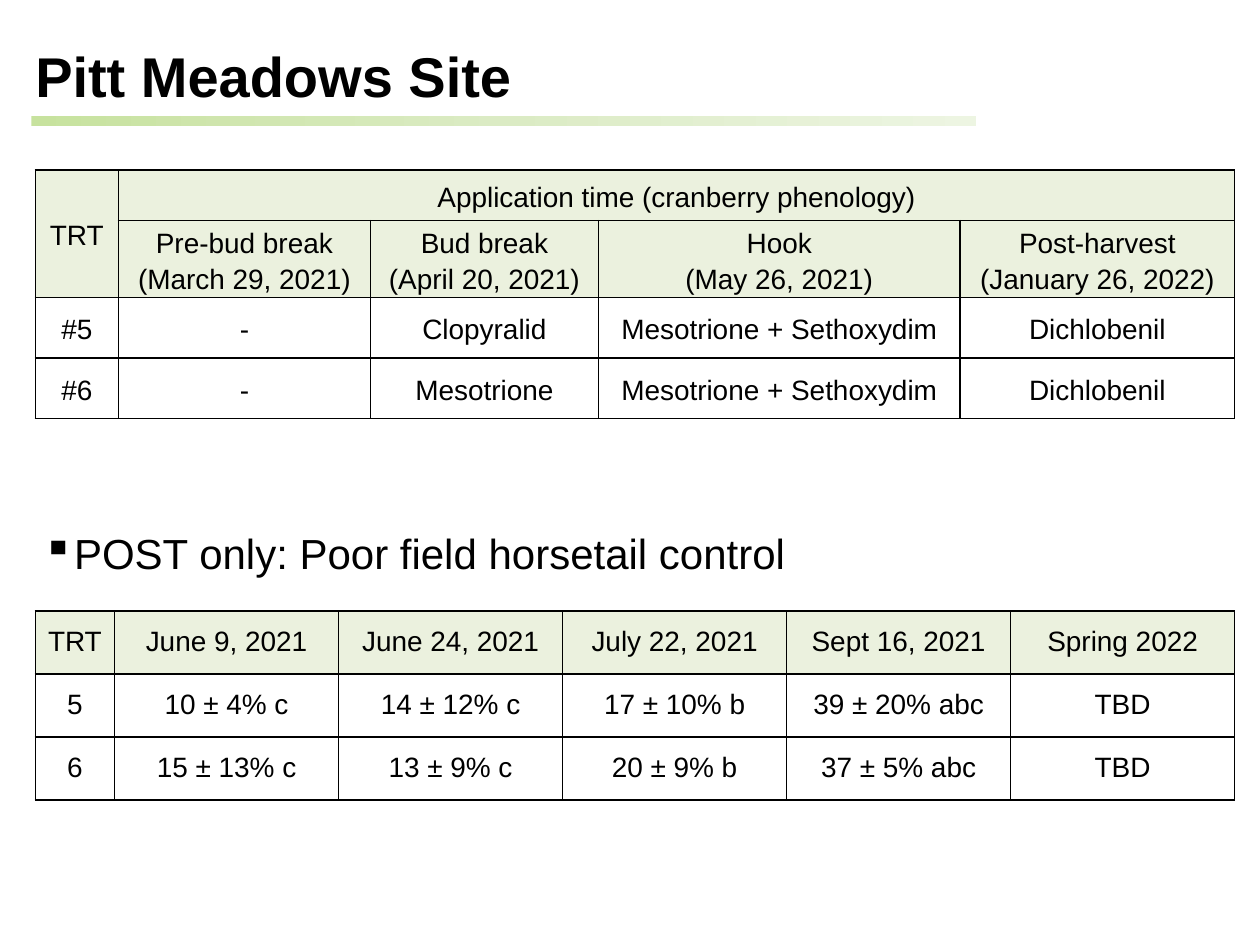
from copy import deepcopy
from dataclasses import dataclass

from lxml import etree
from pptx import Presentation
from pptx.dml.color import RGBColor
from pptx.enum.shapes import MSO_SHAPE
from pptx.enum.text import MSO_ANCHOR, MSO_AUTO_SIZE, PP_ALIGN
from pptx.oxml.ns import qn
from pptx.util import Inches, Pt

RECTANGLE = MSO_SHAPE.RECTANGLE
TOP, MIDDLE = MSO_ANCHOR.TOP, MSO_ANCHOR.MIDDLE
LEFT, CENTER = PP_ALIGN.LEFT, PP_ALIGN.CENTER
FIT_SHAPE = MSO_AUTO_SIZE.SHAPE_TO_FIT_TEXT
TITLE_ONLY = 5
FONT = "Arial"
UNIT = Inches(0.1)
COLORS = {
    "text": "000000",
    "border": "000000",
    "header": "EBF1DE",
    "bar_start": "C7E29E",
    "bar_middle": "DBEBC4",
    "bar_end": "EDF5E2",
}

SCHEDULE = [
    ["TRT", "Application time (cranberry phenology)", "", "", ""],
    ["", "Pre-bud break\n(March 29, 2021)", "Bud break\n(April 20, 2021)",
     "Hook\n(May 26, 2021)", "Post-harvest\n(January 26, 2022)"],
    ["#5", "-", "Clopyralid", "Mesotrione + Sethoxydim", "Dichlobenil"],
    ["#6", "-", "Mesotrione", "Mesotrione + Sethoxydim", "Dichlobenil"],
]
CONTROL = [
    ["TRT", "June 9, 2021", "June 24, 2021", "July 22, 2021", "Sept 16, 2021", "Spring 2022"],
    ["5", "10 ± 4% c", "14 ± 12% c", "17 ± 10% b", "39 ± 20% abc", "TBD"],
    ["6", "15 ± 13% c", "13 ± 9% c", "20 ± 9% b", "37 ± 5% abc", "TBD"],
]


@dataclass
class Box:
    column: float
    row: float
    columns: float
    rows: float

    def frame(self):
        return [round(UNIT * n) for n in (self.column, self.row, self.columns, self.rows)]


def color(name):
    return RGBColor.from_string(COLORS[name])


def style_paragraph(para, size, align, spacing=1.0, bold=False):
    para.alignment = align
    para.line_spacing = spacing
    para.font.name = FONT
    para.font.size = Pt(size)
    para.font.bold = bold
    para.font.color.rgb = color("text")


def place_title(page, box, text):
    title = page.shapes.title
    title.left, title.top, title.width, title.height = box.frame()
    frame = title.text_frame
    frame.text = text
    frame.auto_size = FIT_SHAPE
    frame.vertical_anchor = TOP
    style_paragraph(frame.paragraphs[0], 32, LEFT, bold=True)


def add_bar(page, box):
    bar = page.shapes.add_shape(RECTANGLE, *box.frame())
    bar.shadow.inherit = False
    bar.line.fill.background()
    bar.fill.gradient()
    bar.fill.gradient_angle = 0
    stop_list = next(bar._element.iter(qn("a:gsLst")))
    stop_list.insert(1, deepcopy(stop_list[0]))
    names = ("bar_start", "bar_middle", "bar_end")
    for index, (stop, name) in enumerate(zip(bar.fill.gradient_stops, names)):
        stop.position = index / 2
        stop.color.rgb = color(name)


def add_bullet(page, box, text):
    frame = page.shapes.add_textbox(*box.frame()).text_frame
    frame.word_wrap = True
    frame.auto_size = FIT_SHAPE
    para = frame.paragraphs[0]
    para.text = text
    style_paragraph(para, 24, LEFT, spacing=1.2)
    para.space_before = Pt(12)
    properties = para._p.get_or_add_pPr()
    properties.set("marL", str(Inches(0.31)))
    properties.set("indent", str(Inches(-0.25)))
    bullet = etree.Element(qn("a:buChar"), char="▪")
    properties.find(qn("a:defRPr")).addprevious(bullet)


def add_borders(cell):
    properties = cell._tc.get_or_add_tcPr()
    for index, side in enumerate(("lnL", "lnR", "lnT", "lnB")):
        line = etree.Element(qn(f"a:{side}"), w=str(Pt(1)))
        fill = etree.SubElement(line, qn("a:solidFill"))
        etree.SubElement(fill, qn("a:srgbClr"), val=COLORS["border"])
        properties.insert(index, line)


def style_cell(cell, text, is_header, spacing, margin, anchor):
    cell.text = text
    cell.vertical_anchor = anchor
    cell.margin_left = cell.margin_right = Inches(margin)
    cell.margin_top = cell.margin_bottom = 0
    if is_header:
        cell.fill.solid()
        cell.fill.fore_color.rgb = color("header")
    else:
        cell.fill.background()
    add_borders(cell)
    for para in cell.text_frame.paragraphs:
        style_paragraph(para, 16, CENTER, spacing)


def add_grid(page, box, data, widths, heights, header_rows, spacing, margin, anchor):
    left, top, width, height = box.frame()
    table = page.shapes.add_table(len(data), len(widths), left, top, width, height).table
    table.horz_banding = False
    for column, share in zip(table.columns, widths):
        column.width = round(width * share / sum(widths))
    for row, share in zip(table.rows, heights):
        row.height = round(height * share / sum(heights))
    for r, values in enumerate(data):
        for c, text in enumerate(values):
            style_cell(table.cell(r, c), text, r < header_rows, spacing, margin, anchor)
    return table


def add_schedule(page, box):
    table = add_grid(page, box, SCHEDULE, [0.66, 2, 1.81, 2.87, 2.18],
                     [0.4, 0.61, 0.48, 0.48], 2, 1.15, 0.06, MIDDLE)
    table.cell(0, 0).merge(table.cell(1, 0))
    table.cell(0, 1).merge(table.cell(0, 4))


def add_control(page, box):
    add_grid(page, box, CONTROL, [0.63] + [1.78] * 5, [1] * 3, 1, 1.5, 0.07, TOP)


def main():
    deck = Presentation()
    deck.slide_width, deck.slide_height = UNIT * 100, UNIT * 75
    page = deck.slides.add_slide(deck.slide_layouts[TITLE_ONLY])
    add_bar(page, Box(2.5, 9.2, 75, 0.8))
    place_title(page, Box(1.8, 2.8, 93.5, 6.4), "Pitt Meadows Site")
    add_bullet(page, Box(1.8, 40.6, 96.9, 5.9), "POST only: Poor field horsetail control")
    add_schedule(page, Box(2.8, 13.5, 95.2, 19.7))
    add_control(page, Box(2.8, 48.5, 95.2, 15))
    deck.save("out.pptx")


if __name__ == "__main__":
    main()
